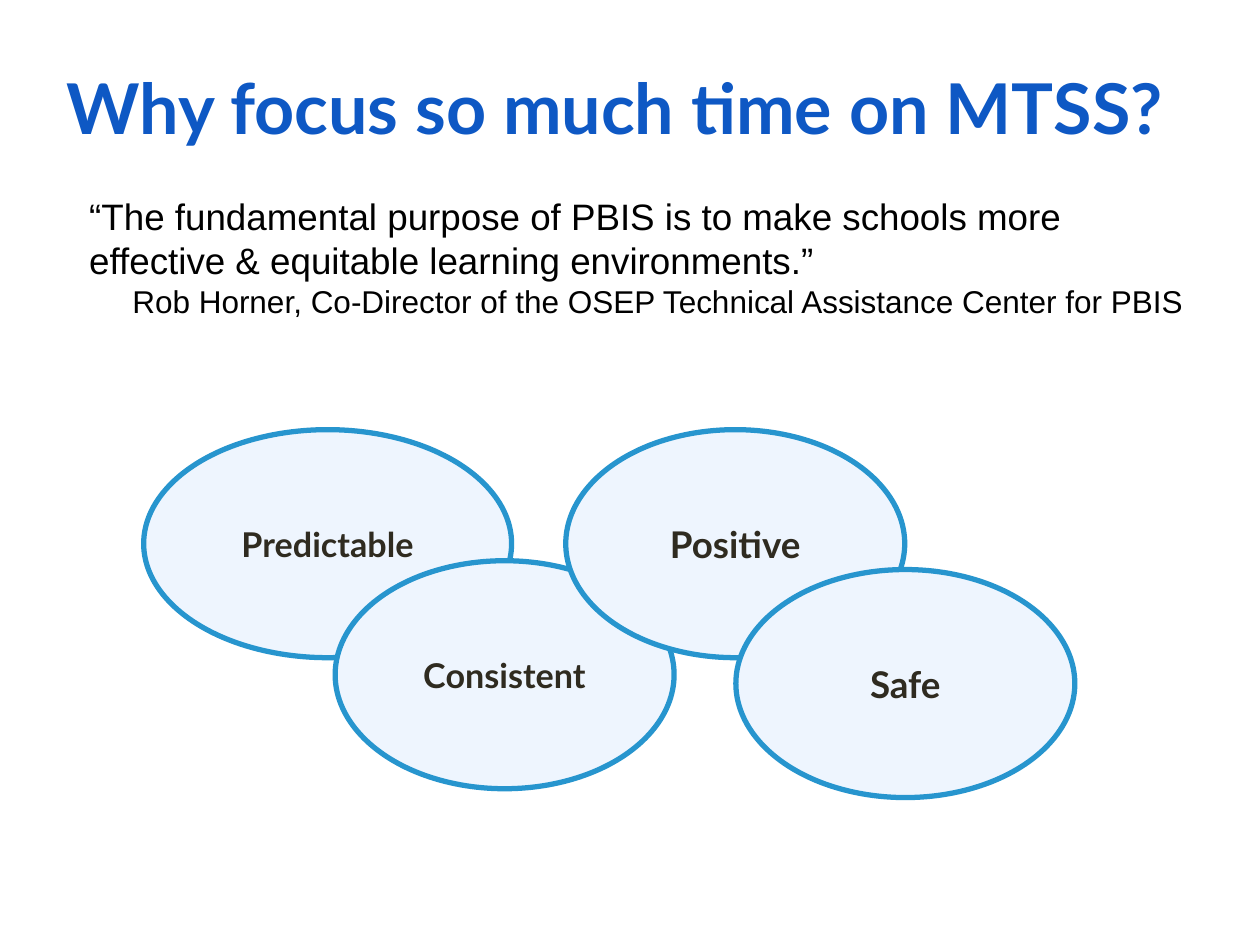
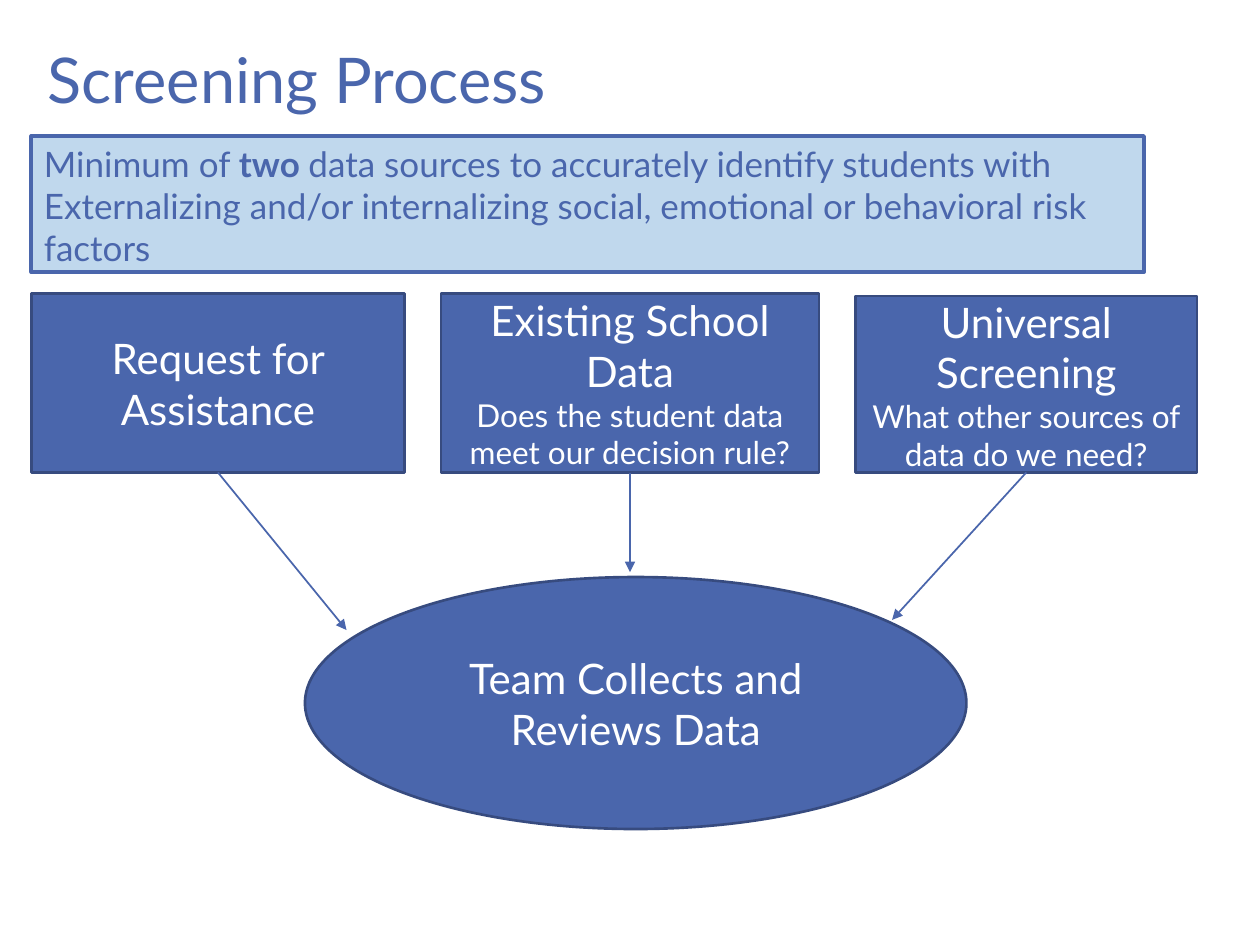
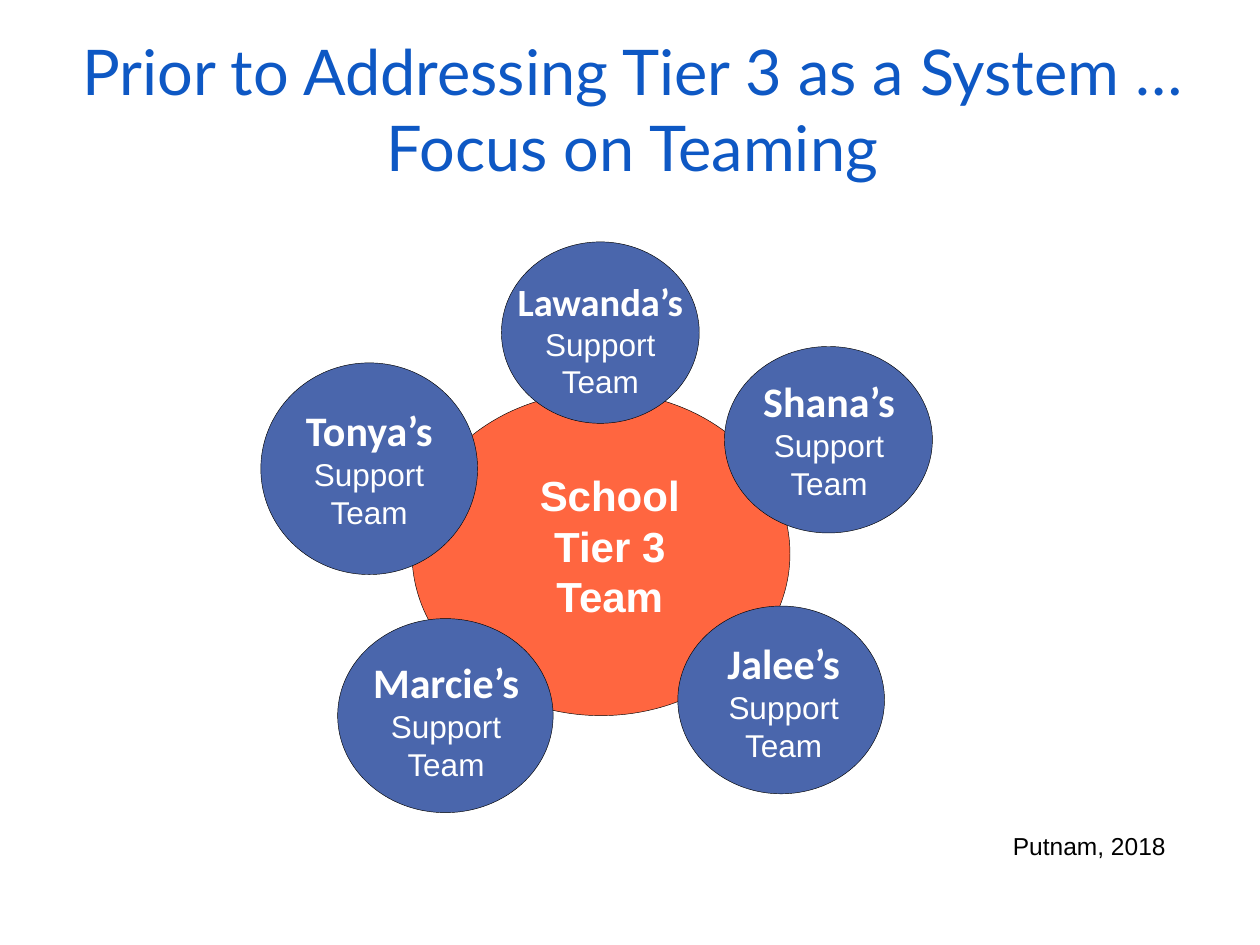
import dataclasses
import typing

import lxml.etree
import pptx
import pptx.dml.color
import pptx.enum.shapes
import pptx.enum.text
import pptx.oxml.ns
import pptx.util

Inches = pptx.util.Inches
Pt = pptx.util.Pt
PP_ALIGN = pptx.enum.text.PP_ALIGN
MSO_ANCHOR = pptx.enum.text.MSO_ANCHOR
MSO_SHAPE = pptx.enum.shapes.MSO_SHAPE

TITLE_BLUE = "0E58C4"
BLUE = "4A66AC"
DARK_BLUE = "374B7F"
BANNER_BLUE = "C0D8ED"
PALE_BLUE = "EEF5FE"
RING_BLUE = "2795CE"
ORANGE = "FF3300"
INK = "2F2B20"
BLACK = "000000"
WHITE = "FFFFFF"


@dataclasses.dataclass(frozen=True)
class Box:
    x: float
    y: float
    w: float
    h: float


@dataclasses.dataclass(frozen=True)
class Style:
    size: float
    color: str = WHITE
    font: str = "Lato"
    bold: bool = False
    align: PP_ALIGN = PP_ALIGN.CENTER


@dataclasses.dataclass(frozen=True)
class Look:
    fill: str
    line: str
    width: float
    opacity: int = 100


@dataclasses.dataclass(frozen=True)
class Run:
    text: str
    style: typing.Optional[Style] = None


@dataclasses.dataclass(frozen=True)
class Para:
    style: Style
    runs: tuple[Run, ...]


@dataclasses.dataclass(frozen=True)
class Block:
    box: Box
    paras: list[Para]


@dataclasses.dataclass(frozen=True)
class SupportTeam:
    name: str
    circle: Box
    label: Box
    name_size: float = 24


QUALITY_LOOK = Look(PALE_BLUE, RING_BLUE, 3)
BANNER_LOOK = Look(BANNER_BLUE, BLUE, 2.25)
STEP_LOOK = Look(BLUE, DARK_BLUE, 1.5)
SCHOOL_LOOK = Look(ORANGE, BLACK, 0.25, opacity=75)
TEAM_LOOK = Look(BLUE, BLACK, 0.25)

HEADING = Style(24)
QUESTION = Style(18)
BANNER = Style(20, BLUE, align=PP_ALIGN.LEFT)
SUPPORT = Style(18, font="Arial")


def rgb(color: str) -> pptx.dml.color.RGBColor:
    return pptx.dml.color.RGBColor.from_string(color)


def place(box: Box) -> tuple:
    return Inches(box.x), Inches(box.y), Inches(box.w), Inches(box.h)


def para(text: str, style: Style) -> Para:
    return Para(style, (Run(text),))


def set_font(font, style: Style) -> None:
    font.name = style.font
    font.size = Pt(style.size)
    font.bold = style.bold
    font.color.rgb = rgb(style.color)


def write(tf, paras: list[Para], anchor: MSO_ANCHOR = MSO_ANCHOR.TOP) -> None:
    tf.word_wrap = True
    tf.auto_size = pptx.enum.text.MSO_AUTO_SIZE.NONE
    tf.vertical_anchor = anchor
    for i, item in enumerate(paras):
        p = tf.paragraphs[0] if i == 0 else tf.add_paragraph()
        p.alignment = item.style.align
        set_font(p.font, item.style)
        for run in item.runs:
            if "\v" in run.text:
                p.text = run.text
                continue
            r = p.add_run()
            r.text = run.text
            if run.style:
                set_font(r.font, run.style)


def add_slide(prs, title: str, box: Box, style: Style):
    s = prs.slides.add_slide(prs.slide_layouts[5])
    sp = s.shapes.title
    sp.left, sp.top, sp.width, sp.height = place(box)
    write(sp.text_frame, [para(title, style)])
    return s


def add_text(s, box: Box, paras: list[Para]) -> None:
    write(s.shapes.add_textbox(*place(box)).text_frame, paras)


def add_block(s, kind: MSO_SHAPE, box: Box, look: Look,
              paras: typing.Sequence[Para] = (),
              anchor: MSO_ANCHOR = MSO_ANCHOR.MIDDLE) -> None:
    sp = s.shapes.add_shape(kind, *place(box))
    sp.shadow.inherit = False
    sp.fill.solid()
    sp.fill.fore_color.rgb = rgb(look.fill)
    sp.line.color.rgb = rgb(look.line)
    sp.line.width = Pt(look.width)
    if look.opacity < 100:
        qn = pptx.oxml.ns.qn
        clr = sp.fill._xPr.find(qn("a:solidFill")).find(qn("a:srgbClr"))
        lxml.etree.SubElement(clr, qn("a:alpha"), val=str(look.opacity * 1000))
    write(sp.text_frame, list(paras), anchor)


def add_arrow(s, x1: float, y1: float, x2: float, y2: float) -> None:
    qn = pptx.oxml.ns.qn
    cxn = s.shapes.add_connector(pptx.enum.shapes.MSO_CONNECTOR.STRAIGHT,
                                 Inches(x1), Inches(y1), Inches(x2), Inches(y2))
    cxn.line.color.rgb = rgb(BLUE)
    cxn.line.width = Pt(1)
    lxml.etree.SubElement(cxn.line._get_or_add_ln(), qn("a:tailEnd"), type="triangle")
    lxml.etree.SubElement(cxn._element.spPr, qn("a:effectLst"))


def build_why(prs) -> None:
    s = add_slide(prs, "Why focus so much time on MTSS?", Box(0.43, 0.46, 9.1, 0.61),
                  Style(40, TITLE_BLUE, bold=True, align=PP_ALIGN.LEFT))
    add_text(s, Box(0.61, 1.49, 8.88, 1.41), [
        para("“The fundamental purpose of PBIS is to make schools more "
             "effective & equitable learning environments.”",
             Style(21, BLACK, "Arial", align=PP_ALIGN.LEFT)),
        para("Rob Horner, Co-Director of the OSEP Technical Assistance Center for PBIS",
             Style(18, BLACK, "Arial", align=PP_ALIGN.RIGHT)),
    ])
    for text, size, x, y, w in [
        ("Predictable", 19.5, 1.14, 3.41, 2.92),
        ("Consistent", 19.5, 2.66, 4.45, 2.69),
        ("Positive", 21, 4.49, 3.41, 2.69),
        ("Safe", 21, 5.84, 4.52, 2.69),
    ]:
        add_block(s, MSO_SHAPE.OVAL, Box(x, y, w, 1.81), QUALITY_LOOK,
                  [para(text, Style(size, INK, bold=True))])


def build_screening(prs) -> None:
    s = add_slide(prs, "Screening Process", Box(0.28, 0.27, 6.94, 1.44),
                  Style(36, BLUE, align=PP_ALIGN.LEFT))
    add_block(s, MSO_SHAPE.RECTANGLE, Box(0.25, 1.08, 8.83, 1.08), BANNER_LOOK, [
        Para(BANNER, (
            Run("Minimum of "),
            Run("two ", dataclasses.replace(BANNER, bold=True)),
            Run("data sources to accurately identify students with"),
        )),
        para("Externalizing and/or internalizing social, emotional or "
             "behavioral risk factors", BANNER),
    ], MSO_ANCHOR.TOP)

    sources = [
        Block(Box(0.25, 2.33, 2.96, 1.42), [para("Request for Assistance", HEADING)]),
        Block(Box(3.5, 2.33, 3, 1.42), [
            para("Existing School Data", HEADING),
            para("Does the student data meet our decision rule?", QUESTION)]),
        Block(Box(6.79, 2.35, 2.71, 1.4), [
            para("Universal Screening", HEADING),
            para("What other sources of data do we need?", QUESTION)]),
    ]
    for source in sources:
        add_block(s, MSO_SHAPE.RECTANGLE, source.box, STEP_LOOK, source.paras)
    add_block(s, MSO_SHAPE.OVAL, Box(2.42, 4.58, 5.25, 2), STEP_LOOK,
              [para("Team Collects and Reviews Data", HEADING)])
    for source, (x, y) in zip(sources, [(2.75, 5), (5, 4.54), (7.08, 4.92)]):
        box = source.box
        add_arrow(s, box.x + box.w / 2, box.y + box.h, x, y)


def build_teaming(prs) -> None:
    s = add_slide(prs, "Prior to Addressing Tier 3 as a System …\vFocus on Teaming",
                  Box(0.02, 0.21, 10, 1.44), Style(36, TITLE_BLUE))
    add_block(s, MSO_SHAPE.OVAL, Box(3.27, 3.11, 3, 2.57), SCHOOL_LOOK)
    add_text(s, Box(4.01, 3.68, 1.66, 0.59),
             [para("School Tier 3 Team", Style(24, font="Arial", bold=True))])
    for team in [
        SupportTeam("Jalee’s", Box(5.38, 4.81, 1.64, 1.49), Box(5.52, 5.01, 1.4, 0.81)),
        SupportTeam("Marcie’s", Box(2.68, 4.91, 1.71, 1.54), Box(2.84, 5.16, 1.4, 0.81)),
        SupportTeam("Tonya’s", Box(2.07, 2.88, 1.72, 1.68), Box(2.23, 3.16, 1.4, 0.88)),
        SupportTeam("Lawanda’s", Box(3.98, 1.92, 1.57, 1.44), Box(3.98, 2.16, 1.57, 0.81), 22),
        SupportTeam("Shana’s", Box(5.75, 2.75, 1.65, 1.48), Box(5.88, 2.93, 1.4, 0.81)),
    ]:
        add_block(s, MSO_SHAPE.OVAL, team.circle, TEAM_LOOK)
        name_style = Style(team.name_size, font="Calibri", bold=True)
        add_text(s, team.label, [Para(SUPPORT, (
            Run(team.name + " ", name_style), Run("Support Team")))])
    add_text(s, Box(7.94, 6.55, 2.08, 0.34),
             [para("Putnam, 2018", Style(14, BLACK, "Arial", align=PP_ALIGN.LEFT))])


def main() -> None:
    prs = pptx.Presentation()
    prs.slide_width = Inches(10)
    prs.slide_height = Inches(7.5)
    build_why(prs)
    build_screening(prs)
    build_teaming(prs)
    prs.save("out.pptx")


if __name__ == "__main__":
    main()
